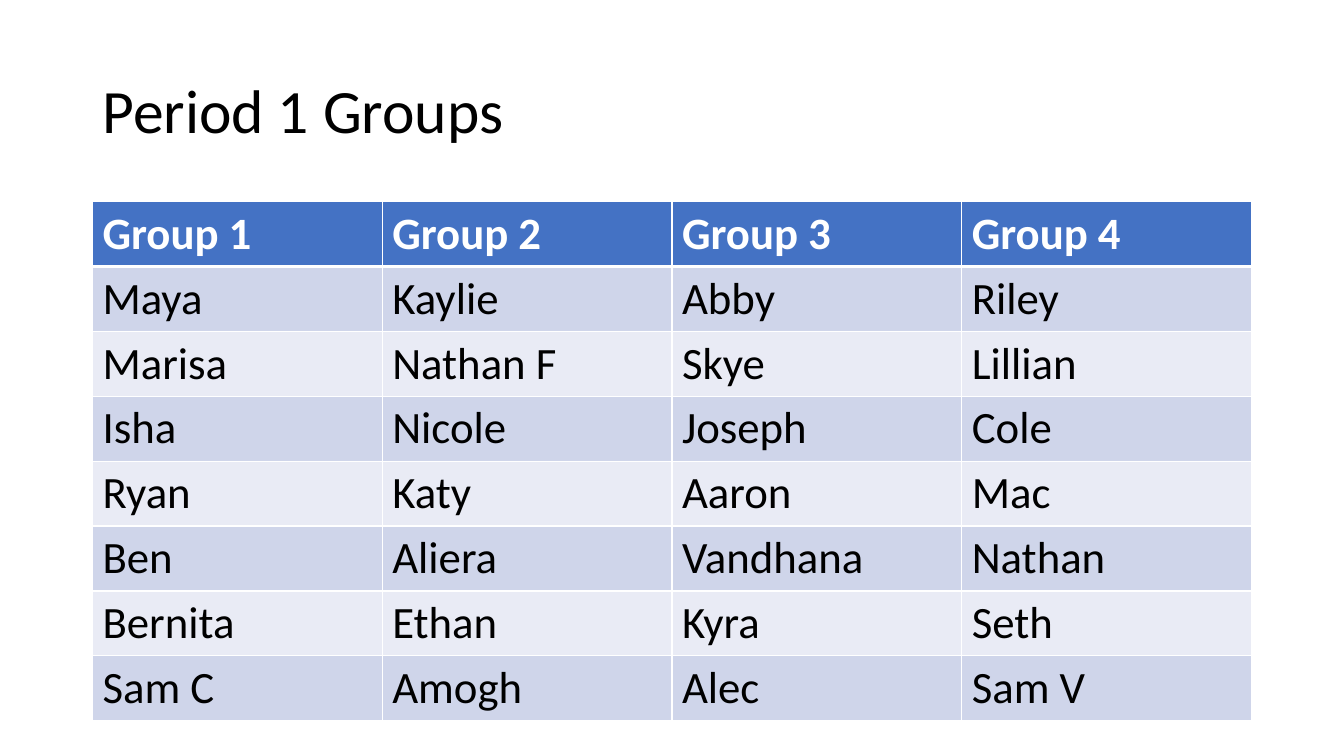
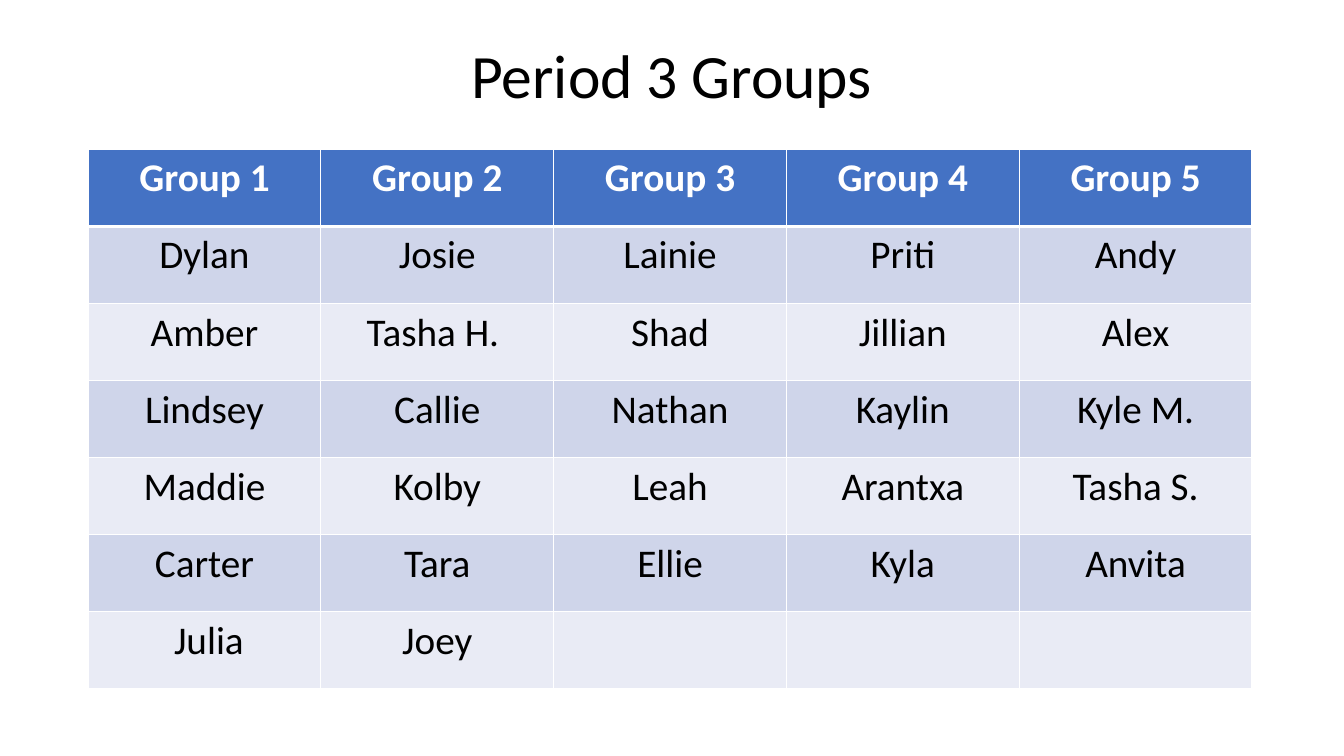
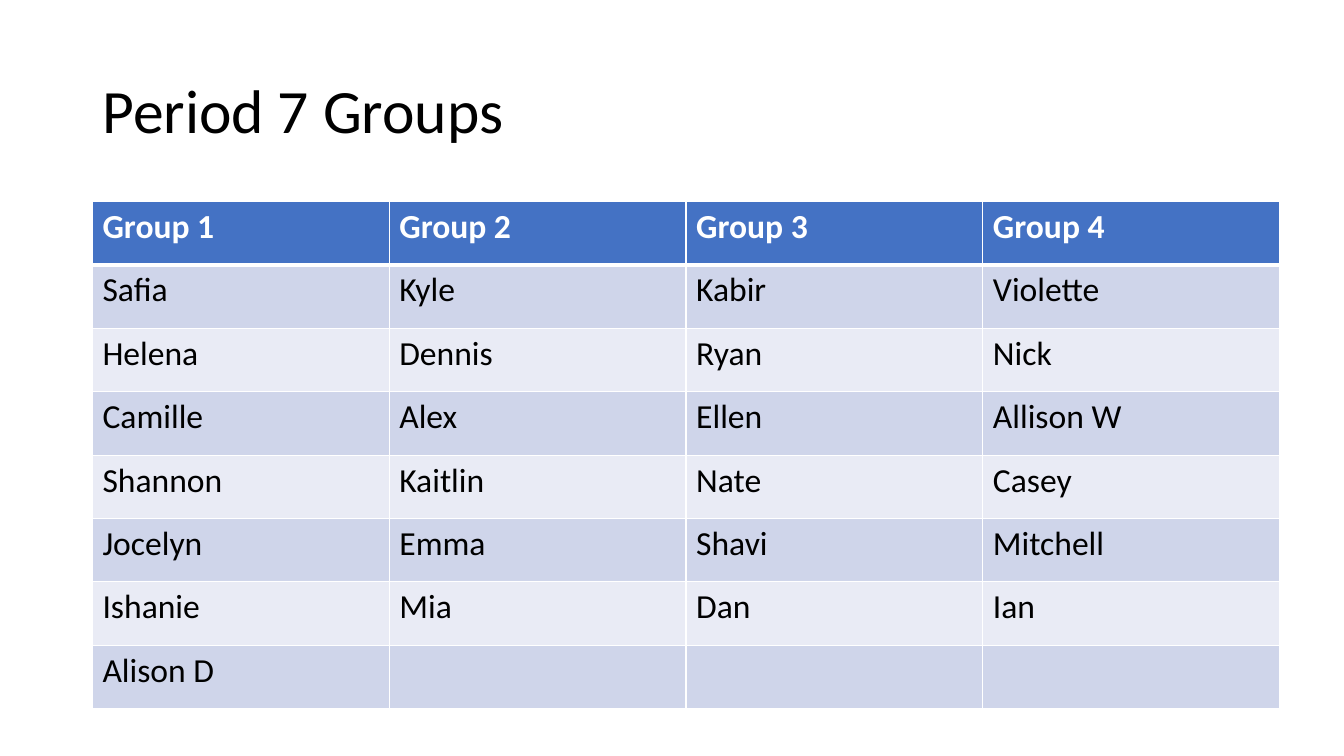
from dataclasses import dataclass

from lxml.etree import SubElement
from pptx import Presentation
from pptx.dml.color import RGBColor
from pptx.enum.text import MSO_ANCHOR, MSO_AUTO_SIZE, PP_ALIGN
from pptx.oxml.ns import qn
from pptx.slide import Slide
from pptx.table import _Cell
from pptx.text.text import _Paragraph
from pptx.util import Cm, Pt

FONT = "Calibri"
COLORS = {
    "header": "4472C4",
    "odd_row": "CFD5EA",
    "even_row": "E9EBF5",
    "grid": "FFFFFF",
    "header_text": "FFFFFF",
    "text": "000000",
}
TITLE_LEFT, TITLE_TOP, TITLE_WIDTH = Cm(2.33), Cm(1.01), Cm(29.21)
TITLE_SIZE = 44
THIN, THICK = Pt(1), Pt(3)


@dataclass(frozen=True)
class Period:
    title: str
    groups: list[list[str]]
    left: float
    top: float
    width: float
    height: float
    size: int
    title_height: float = 3.68
    align: PP_ALIGN = PP_ALIGN.LEFT


PERIODS = [
    Period(
        "Period 1 Groups",
        [
            ["Maya", "Marisa", "Isha", "Ryan", "Ben", "Bernita", "Sam C"],
            ["Kaylie", "Nathan F", "Nicole", "Katy", "Aliera", "Ethan", "Amogh"],
            ["Abby", "Skye", "Joseph", "Aaron", "Vandhana", "Kyra", "Alec"],
            ["Riley", "Lillian", "Cole", "Mac", "Nathan", "Seth", "Sam V"],
        ],
        left=2.33, top=5.08, width=29.21, height=12.88, size=32,
    ),
    Period(
        "Period 3 Groups",
        [
            ["Dylan", "Amber", "Lindsey", "Maddie", "Carter", " Julia"],
            ["Josie", "Tasha H. ", "Callie", "Kolby", "Tara", "Joey"],
            ["Lainie", "Shad", "Nathan", "Leah", "Ellie"],
            ["Priti", "Jillian", "Kaylin", "Arantxa", "Kyla"],
            ["Andy", "Alex", "Kyle M.", "Tasha S.", "Anvita"],
        ],
        left=2.22, top=3.77, width=29.33, height=13.59, size=28,
        title_height=1.96, align=PP_ALIGN.CENTER,
    ),
    Period(
        "Period 7 Groups",
        [
            ["Safia", "Helena", "Camille", "Shannon", "Jocelyn", "Ishanie", "Alison D"],
            ["Kyle", "Dennis", "Alex", "Kaitlin", "Emma", "Mia"],
            ["Kabir", "Ryan", "Ellen", "Nate", "Shavi", "Dan"],
            ["Violette", "Nick", "Allison W", "Casey", "Mitchell", "Ian"],
        ],
        left=2.33, top=5.08, width=29.92, height=12.78, size=24,
    ),
]


def rgb(name: str) -> RGBColor:
    return RGBColor.from_string(COLORS[name])


def add_run(paragraph: _Paragraph, text: str, size: int, color: str, bold: bool = False) -> None:
    run = paragraph.add_run()
    run.text = text
    run.font.name = FONT
    run.font.size = Pt(size)
    run.font.bold = bold
    run.font.color.rgb = rgb(color)


def add_title(slide: Slide, period: Period) -> None:
    title = slide.shapes.title
    title.left, title.top = TITLE_LEFT, TITLE_TOP
    title.width, title.height = TITLE_WIDTH, Cm(period.title_height)
    frame = title.text_frame
    frame.auto_size = MSO_AUTO_SIZE.NONE
    frame.vertical_anchor = MSO_ANCHOR.MIDDLE
    paragraph = frame.paragraphs[0]
    paragraph.alignment = period.align
    paragraph.line_spacing = 0.9
    add_run(paragraph, period.title, TITLE_SIZE, "text")


def set_borders(cell: _Cell, row: int) -> None:
    widths = {
        "a:lnL": THIN,
        "a:lnR": THIN,
        "a:lnT": THICK if row == 1 else THIN,
        "a:lnB": THICK if row == 0 else THIN,
    }
    properties = cell._tc.get_or_add_tcPr()
    for side, width in widths.items():
        line = SubElement(properties, qn(side), w=str(width))
        fill = SubElement(line, qn("a:solidFill"))
        SubElement(fill, qn("a:srgbClr"), val=COLORS["grid"])


def fill_cell(cell: _Cell, row: int, name: str, period: Period) -> None:
    is_header = row == 0
    set_borders(cell, row)
    cell.fill.solid()
    cell.fill.fore_color.rgb = rgb("header" if is_header else "odd_row" if row % 2 else "even_row")
    paragraph = cell.text_frame.paragraphs[0]
    paragraph.alignment = period.align
    if name:
        add_run(paragraph, name, period.size, "header_text" if is_header else "text", is_header)


def add_groups(slide: Slide, period: Period) -> None:
    row_count = 1 + max(len(members) for members in period.groups)
    column_count = len(period.groups)
    groups = slide.shapes.add_table(
        row_count, column_count,
        Cm(period.left), Cm(period.top), Cm(period.width), Cm(period.height),
    ).table
    for column, members in enumerate(period.groups):
        names = [f"Group {column + 1}", *members]
        names += [""] * (row_count - len(names))
        for row, name in enumerate(names):
            fill_cell(groups.cell(row, column), row, name, period)


def main() -> None:
    deck = Presentation()
    deck.slide_width, deck.slide_height = Cm(33.87), Cm(19.05)
    title_only = deck.slide_layouts[5]
    for period in PERIODS:
        slide = deck.slides.add_slide(title_only)
        add_title(slide, period)
        add_groups(slide, period)
    deck.save("out.pptx")


if __name__ == "__main__":
    main()
